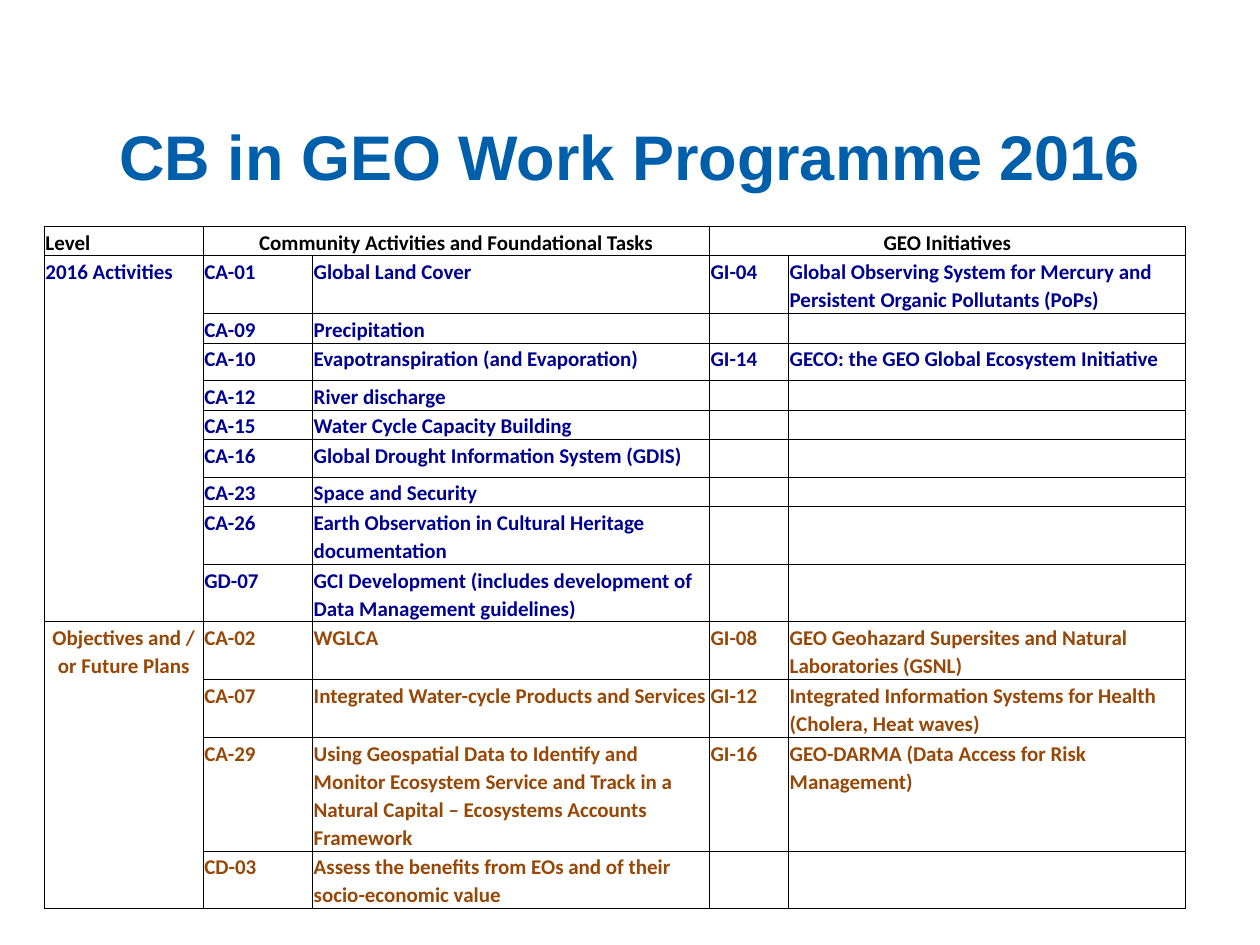
from dataclasses import dataclass

from lxml.etree import SubElement
from pptx import Presentation
from pptx.dml.color import RGBColor as RGB
from pptx.enum.text import MSO_ANCHOR as ANCHOR, PP_ALIGN as ALIGN
from pptx.oxml.ns import qn
from pptx.util import Pt


@dataclass(frozen=True)
class Theme:
    title_font: str = "Arial"
    body_font: str = "Calibri"
    title_size: float = 36
    body_size: float = 12
    line_width: float = 0.5
    title: str = "005FAA"
    header: str = "000000"
    current: str = "000090"
    future: str = "974706"
    border: str = "000000"


THEME = Theme()

COL_WIDTHS = [90.8, 62.5, 226.8, 45.2, 226.8]
HEADER_HEIGHT = 16.8

CURRENT = [
    (33, "CA-01", "Global Land Cover", "GI-04",
     "Global Observing System for Mercury and Persistent Organic Pollutants (PoPs)"),
    (16.8, "CA-09", "Precipitation", "", ""),
    (21.6, "CA-10", "Evapotranspiration (and Evaporation)", "GI-14",
     "GECO: the GEO Global Ecosystem Initiative"),
    (16.8, "CA-12", "River discharge", "", ""),
    (16.8, "CA-15", "Water Cycle Capacity Building", "", ""),
    (21.6, "CA-16", "Global Drought Information System (GDIS)", "", ""),
    (16.8, "CA-23", "Space and Security", "", ""),
    (33, "CA-26", "Earth Observation in Cultural Heritage documentation", "", ""),
    (32.8, "GD-07",
     "GCI Development (includes development of Data Management guidelines)", "", ""),
]
FUTURE = [
    (33, "CA-02", "WGLCA", "GI-08",
     "GEO Geohazard Supersites and Natural Laboratories (GSNL)"),
    (33, "CA-07", "Integrated Water-cycle Products and Services", "GI-12",
     "Integrated Information Systems for Health (Cholera, Heat waves)"),
    (65, "CA-29",
     "Using Geospatial Data to Identify and Monitor Ecosystem Service and Track in a "
     "Natural Capital – Ecosystems Accounts Framework", "GI-16",
     "GEO-DARMA (Data Access for Risk Management)"),
    (32.8, "CD-03",
     "Assess the benefits from EOs and of their socio-economic value", "", ""),
]
GROUPS = [
    ("2016 Activities", ALIGN.LEFT, THEME.current, CURRENT),
    ("Objectives and / or Future Plans", ALIGN.CENTER, THEME.future, FUTURE),
]


def set_font(p, name, size, color):
    p.font.name = name
    p.font.size = Pt(size)
    p.font.bold = True
    p.font.color.rgb = RGB.from_string(color)


def add_title(s, text, left, top, width, height):
    title = s.shapes.title
    title.left, title.top = Pt(left), Pt(top)
    title.width, title.height = Pt(width), Pt(height)
    tf = title.text_frame
    tf.text = text
    tf.vertical_anchor = ANCHOR.MIDDLE
    p = tf.paragraphs[0]
    p.alignment = ALIGN.CENTER
    set_font(p, THEME.title_font, THEME.title_size, THEME.title)


def add_borders(cell):
    props = cell._tc.get_or_add_tcPr()
    for side in ("lnL", "lnR", "lnT", "lnB"):
        line = SubElement(props, qn(f"a:{side}"), w=str(Pt(THEME.line_width)))
        fill = SubElement(line, qn("a:solidFill"))
        SubElement(fill, qn("a:srgbClr"), val=THEME.border)


def fill_cell(cell, text, color, align=ALIGN.LEFT):
    cell.margin_left = cell.margin_right = cell.margin_top = Pt(0.7)
    cell.margin_bottom = Pt(0)
    cell.text = text
    p = cell.text_frame.paragraphs[0]
    p.alignment = align
    p.line_spacing = 1.1
    set_font(p, THEME.body_font, THEME.body_size, color)


def add_programme_table(s, left, top):
    heights = [HEADER_HEIGHT] + [row[0] for group in GROUPS for row in group[3]]
    frame = s.shapes.add_table(len(heights), len(COL_WIDTHS), Pt(left), Pt(top),
                               Pt(sum(COL_WIDTHS)), Pt(sum(heights)))
    table = frame.table
    table.first_row = table.horz_banding = False
    for column, width in zip(table.columns, COL_WIDTHS):
        column.width = Pt(width)
    for row, height in zip(table.rows, heights):
        row.height = Pt(height)
    for cell in table.iter_cells():
        add_borders(cell)
        cell.fill.background()
        fill_cell(cell, "", THEME.header)

    fill_cell(table.cell(0, 0), "Level", THEME.header)
    for col, heading in ((1, "Community Activities and Foundational Tasks"),
                         (3, "GEO Initiatives")):
        table.cell(0, col).merge(table.cell(0, col + 1))
        fill_cell(table.cell(0, col), heading, THEME.header, ALIGN.CENTER)

    first = 1
    for level, align, color, rows in GROUPS:
        table.cell(first, 0).merge(table.cell(first + len(rows) - 1, 0))
        fill_cell(table.cell(first, 0), level, color, align)
        for r, (_, *texts) in enumerate(rows, first):
            for c, text in enumerate(texts, 1):
                fill_cell(table.cell(r, c), text, color)
        first += len(rows)


def main():
    prs = Presentation()
    prs.slide_width, prs.slide_height = Pt(720), Pt(540)
    s = prs.slides.add_slide(prs.slide_layouts[5])
    add_title(s, "CB in GEO Work Programme 2016", 0, 43.2, 720, 90.7)
    add_programme_table(s, 25.3, 129.4)
    prs.save("out.pptx")


if __name__ == "__main__":
    main()
